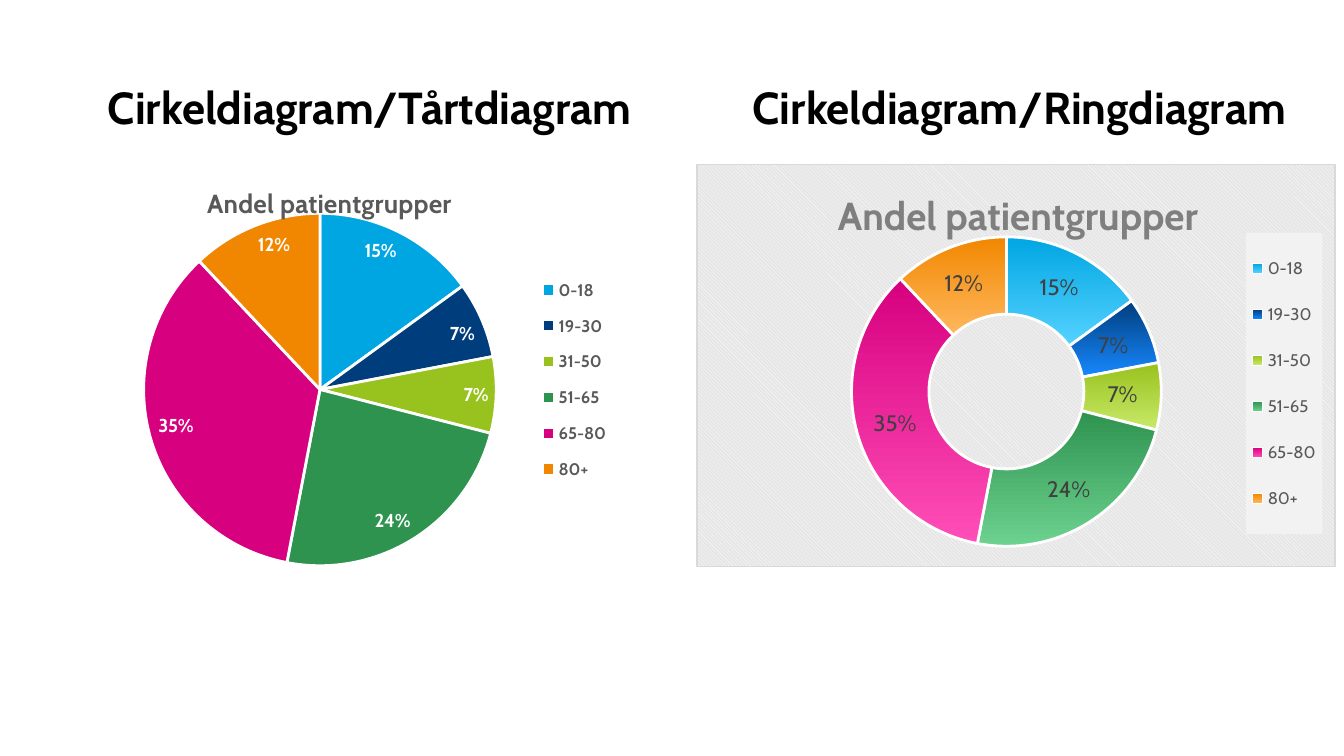
from dataclasses import dataclass
from typing import Optional

from lxml import etree
from pptx import Presentation
from pptx.chart.data import CategoryChartData
from pptx.enum.chart import XL_CHART_TYPE, XL_LABEL_POSITION, XL_LEGEND_POSITION
from pptx.enum.text import MSO_ANCHOR, PP_ALIGN
from pptx.dml.color import RGBColor
from pptx.oxml import parse_xml
from pptx.oxml.ns import nsdecls, qn
from pptx.util import Inches, Pt

PIE, DOUGHNUT = XL_CHART_TYPE.PIE, XL_CHART_TYPE.DOUGHNUT
INSIDE_END = XL_LABEL_POSITION.INSIDE_END
LEGEND_RIGHT = XL_LEGEND_POSITION.RIGHT
TOP, CENTER = MSO_ANCHOR.TOP, PP_ALIGN.CENTER


@dataclass(frozen=True)
class Theme:
    font: str = "Cabin"
    black: str = "000000"
    white: str = "FFFFFF"
    dark_gray: str = "595959"
    middle_gray: str = "7F7F7F"
    label_gray: str = "404040"
    legend_fill: str = "F2F2F2"
    panel: str = "E6E6E6"
    panel_border: str = "D9D9D9"
    heading_size: int = 24
    base_size: int = 10
    legend_size: int = 9
    separator: float = 1.5


@dataclass(frozen=True)
class AgeGroup:
    label: str
    value: int
    color: str
    light: str


@dataclass(frozen=True)
class Box:
    """Left, top, width and height."""
    left: float
    top: float
    width: float = 0
    height: float = 0


@dataclass(frozen=True)
class ChartPanel:
    """Outer boxes are in inches; inner boxes are shares of the chart."""
    heading: str
    heading_box: Box
    chart_box: Box
    kind: XL_CHART_TYPE
    plot: Box
    title: Box
    legend: Box
    title_size: int
    title_color: str
    label_size: int
    label_color: str
    bold: bool
    gradient: bool = False
    label_position: Optional[XL_LABEL_POSITION] = None
    hole: Optional[int] = None
    patterned: bool = False


THEME = Theme()
CHART_TITLE = "Andel patientgrupper"
GROUPS = [
    AgeGroup("0-18", 15, "00A6E2", "55D2FF"),
    AgeGroup("19-30", 7, "003D7C", "1789FF"),
    AgeGroup("31-50", 7, "98C21D", "C8E969"),
    AgeGroup("51-65", 24, "2D934F", "6DD28F"),
    AgeGroup("65-80", 35, "D7007F", "FF4EB7"),
    AgeGroup("80+", 12, "F18700", "FFB85E"),
]
PANELS = [
    ChartPanel("Cirkeldiagram/Tårtdiagram", Box(0.64, 0.59, 4.22, 0.56),
               Box(0, 1.22, 4.86, 3), PIE, plot=Box(0.22, 0.12, 0.54, 0.88),
               title=Box(0.31, 0.04), legend=Box(0.81, 0.25, 0.14, 0.57),
               title_size=14, title_color=THEME.dark_gray, label_size=10,
               label_color=THEME.white, bold=True, label_position=INSIDE_END),
    ChartPanel("Cirkeldiagram/Ringdiagram", Box(5.24, 0.59, 4.69, 0.56),
               Box(5.18, 1.22, 4.76, 3), DOUGHNUT, plot=Box(0.21, 0.18, 0.55, 0.77),
               title=Box(0.21, 0.04), legend=Box(0.86, 0.17, 0.12, 0.75),
               title_size=21, title_color=THEME.middle_gray, label_size=12,
               label_color=THEME.label_gray, bold=False, gradient=True, hole=70,
               patterned=True),
]


def inches(box: Box) -> list:
    return [Inches(value) for value in (box.left, box.top, box.width, box.height)]


def style_font(font, size: float, color: str, bold: bool) -> None:
    font.name = THEME.font
    font.size = Pt(size)
    font.bold = bold
    font.color.rgb = RGBColor.from_string(color)


def set_layout(element: etree._Element, box: Box, previous: Optional[str] = None) -> None:
    """Place a chart part by shares of the chart, after the named child."""
    for old in element.findall(qn("c:layout")):
        element.remove(old)
    inner = '<c:layoutTarget val="inner"/>' if previous is None else ""
    values = [("x", box.left), ("y", box.top)]
    if box.width:
        values += [("w", box.width), ("h", box.height)]
    modes = "".join(f'<c:{name}Mode val="edge"/>' for name in "xy")
    shares = "".join(f'<c:{name} val="{value}"/>' for name, value in values)
    layout = parse_xml(f'<c:layout {nsdecls("c")}><c:manualLayout>{inner}{modes}{shares}'
                       '</c:manualLayout></c:layout>')
    if previous is None:
        element.insert(0, layout)
    else:
        element.find(qn(previous)).addnext(layout)


def shape_properties(content: str) -> etree._Element:
    return parse_xml(f'<c:spPr {nsdecls("c", "a")}>{content}</c:spPr>')


def solid(color: str) -> str:
    return f'<a:solidFill><a:srgbClr val="{color}"/></a:solidFill>'


def add_heading(slide, panel: ChartPanel) -> None:
    text_frame = slide.shapes.add_textbox(*inches(panel.heading_box)).text_frame
    text_frame.word_wrap = True
    text_frame.vertical_anchor = TOP
    text_frame.text = panel.heading
    paragraph = text_frame.paragraphs[0]
    paragraph.alignment = CENTER
    paragraph.line_spacing = 0.9
    style_font(paragraph.runs[0].font, THEME.heading_size, THEME.black, True)


def color_slices(series, gradient: bool) -> None:
    for index, group in enumerate(GROUPS):
        slice_format = series.points[index].format
        fill = slice_format.fill
        if gradient:
            fill.gradient()
            fill.gradient_angle = 270
            for stop, color in zip(fill.gradient_stops, (group.color, group.light)):
                stop.color.rgb = RGBColor.from_string(color)
        else:
            fill.solid()
            fill.fore_color.rgb = RGBColor.from_string(group.color)
        slice_format.line.color.rgb = RGBColor.from_string(THEME.white)
        slice_format.line.width = Pt(THEME.separator)


def add_chart(slide, panel: ChartPanel) -> None:
    data = CategoryChartData()
    data.categories = [group.label for group in GROUPS]
    data.add_series("Series 1", [group.value for group in GROUPS])
    chart = slide.shapes.add_chart(panel.kind, *inches(panel.chart_box), data).chart
    style_font(chart.font, THEME.base_size, THEME.black, False)
    chart_space = chart.element

    # Title
    chart.has_title = True
    text_frame = chart.chart_title.text_frame
    text_frame.text = CHART_TITLE
    style_font(text_frame.paragraphs[0].runs[0].font, panel.title_size, panel.title_color, True)
    set_layout(chart_space.find(f".//{qn('c:title')}"), panel.title, "c:tx")

    # Slices and percentages
    plot = chart.plots[0]
    plot.vary_by_categories = True
    series = plot.series[0]
    color_slices(series, panel.gradient)
    labels = series.data_labels
    labels.show_percentage = True
    labels.show_value = False
    labels.number_format = "0%"
    labels.number_format_is_linked = False
    style_font(labels.font, panel.label_size, panel.label_color, panel.bold)
    if panel.label_position is not None:
        labels.position = panel.label_position
    if panel.hole is not None:
        chart_space.find(f".//{qn('c:holeSize')}").set("val", str(panel.hole))
    set_layout(chart_space.find(f".//{qn('c:plotArea')}"), panel.plot)

    # Legend
    chart.has_legend = True
    chart.legend.position = LEGEND_RIGHT
    chart.legend.include_in_layout = False
    style_font(chart.legend.font, THEME.legend_size, THEME.dark_gray, panel.bold)
    legend = chart_space.find(f".//{qn('c:legend')}")
    set_layout(legend, panel.legend, "c:legendPos")

    # Patterned background
    if panel.patterned:
        legend.find(qn("c:txPr")).addprevious(shape_properties(solid(THEME.legend_fill)))
        background = (f'<a:pattFill prst="dkDnDiag"><a:fgClr><a:srgbClr val="{THEME.white}"/>'
                      f'</a:fgClr><a:bgClr><a:srgbClr val="{THEME.panel}"/></a:bgClr></a:pattFill>'
                      f'<a:ln w="{Pt(0.75)}">{solid(THEME.panel_border)}</a:ln>')
        chart_space.find(qn("c:txPr")).addprevious(shape_properties(background))


def main() -> None:
    presentation = Presentation()
    presentation.slide_width = Inches(10)
    presentation.slide_height = Inches(10 * 9 / 16)
    slide = presentation.slides.add_slide(presentation.slide_layouts[6])
    for panel in PANELS:
        add_heading(slide, panel)
        add_chart(slide, panel)
    presentation.save("out.pptx")


if __name__ == "__main__":
    main()
